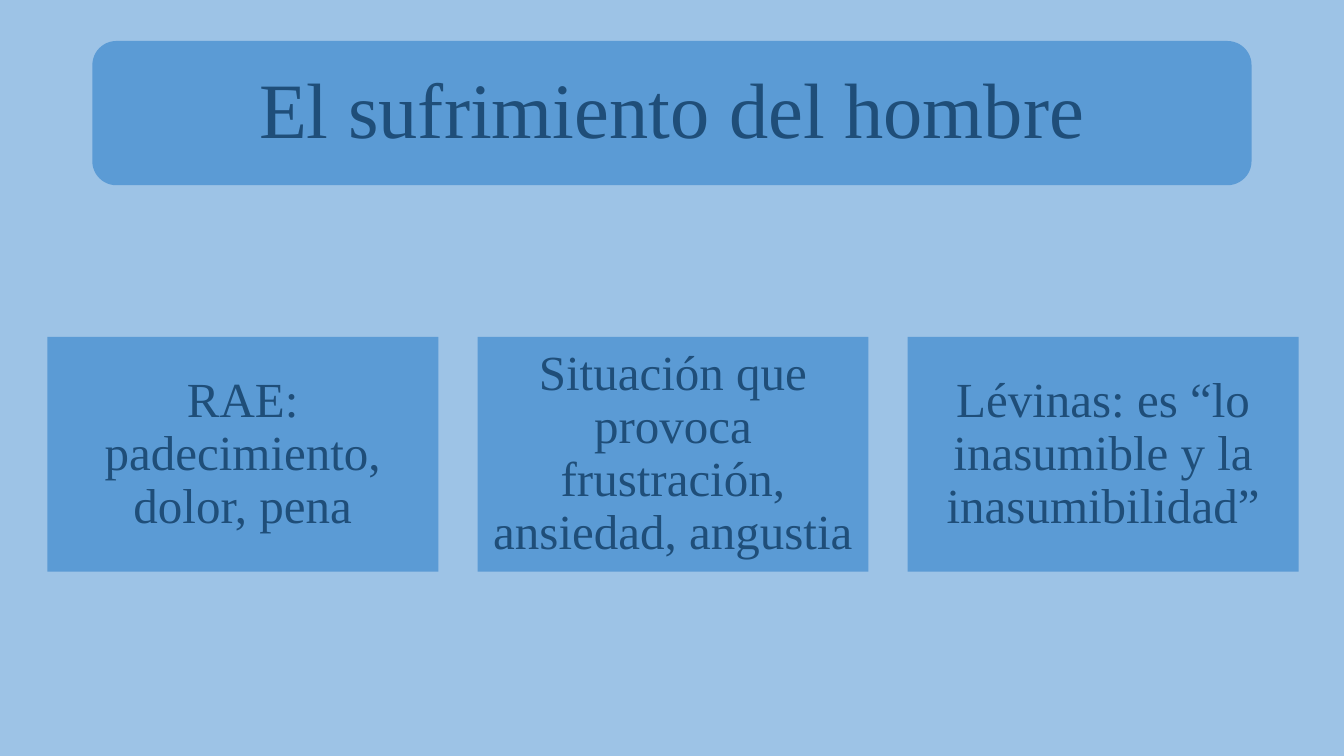
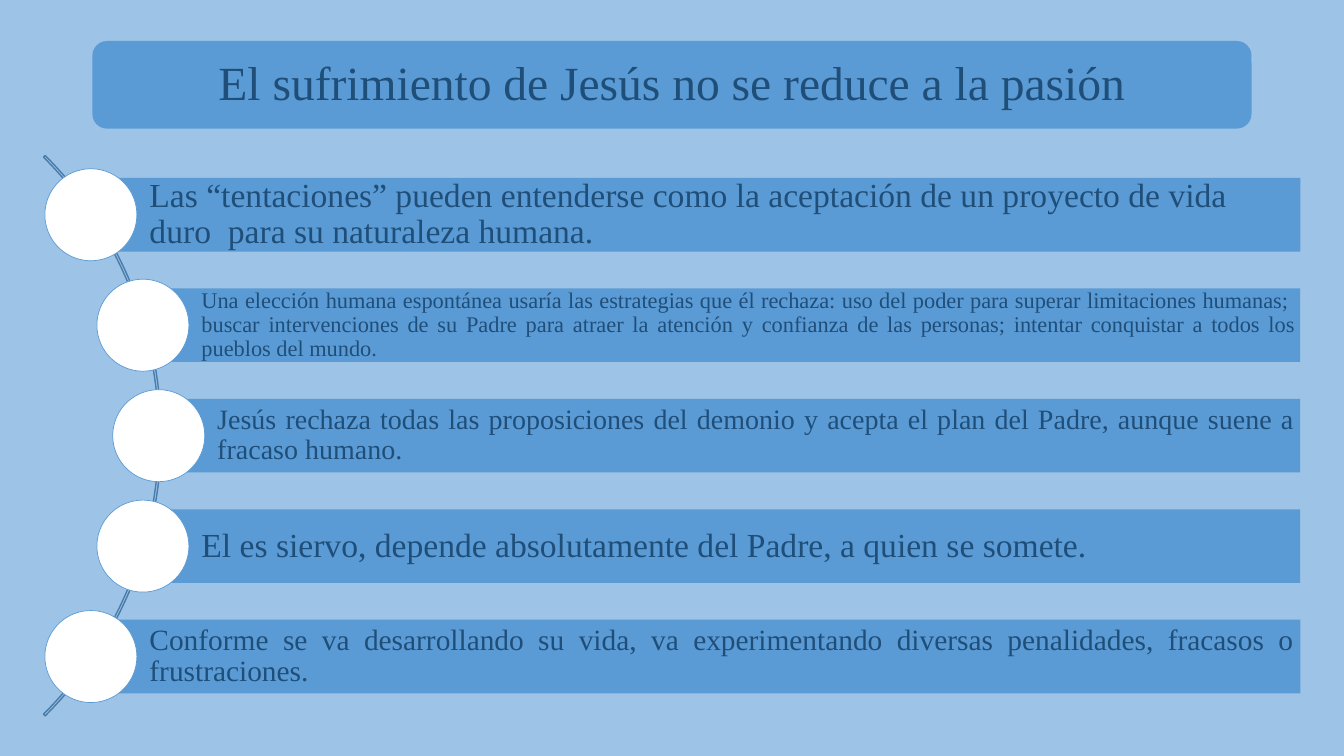
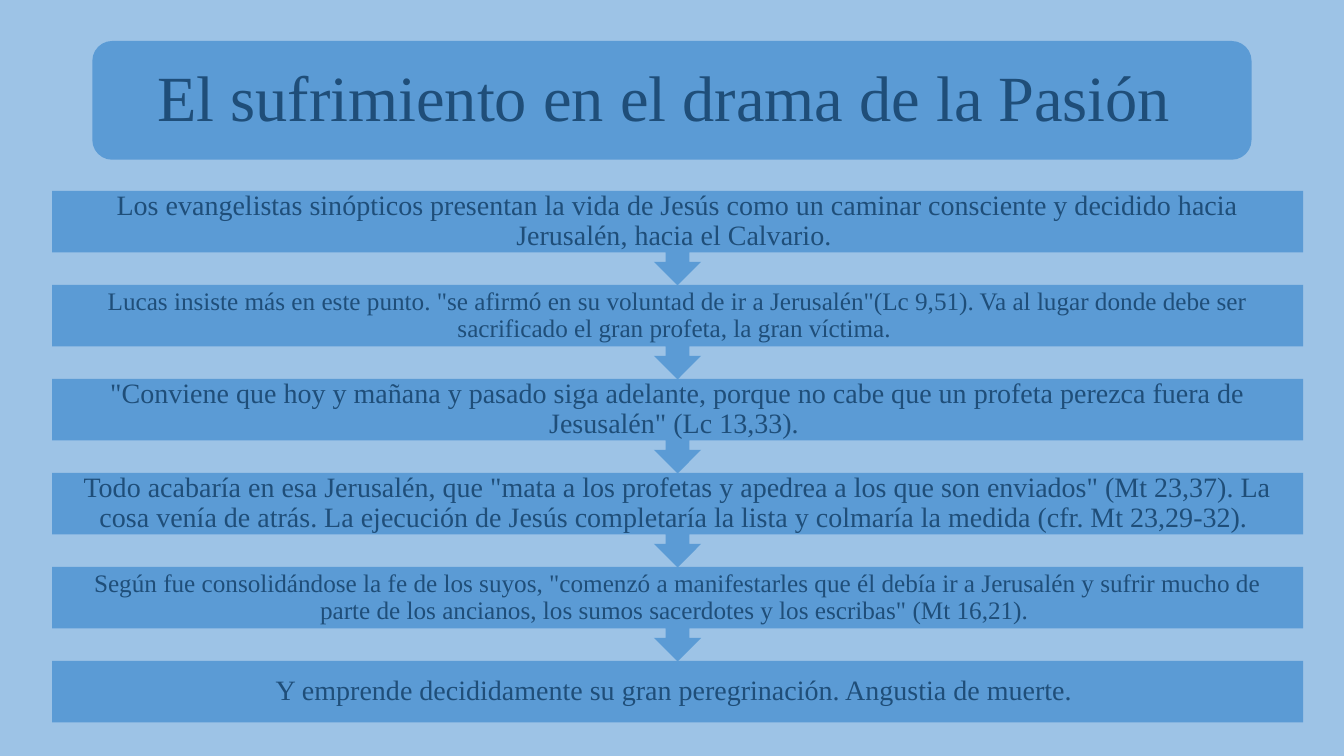
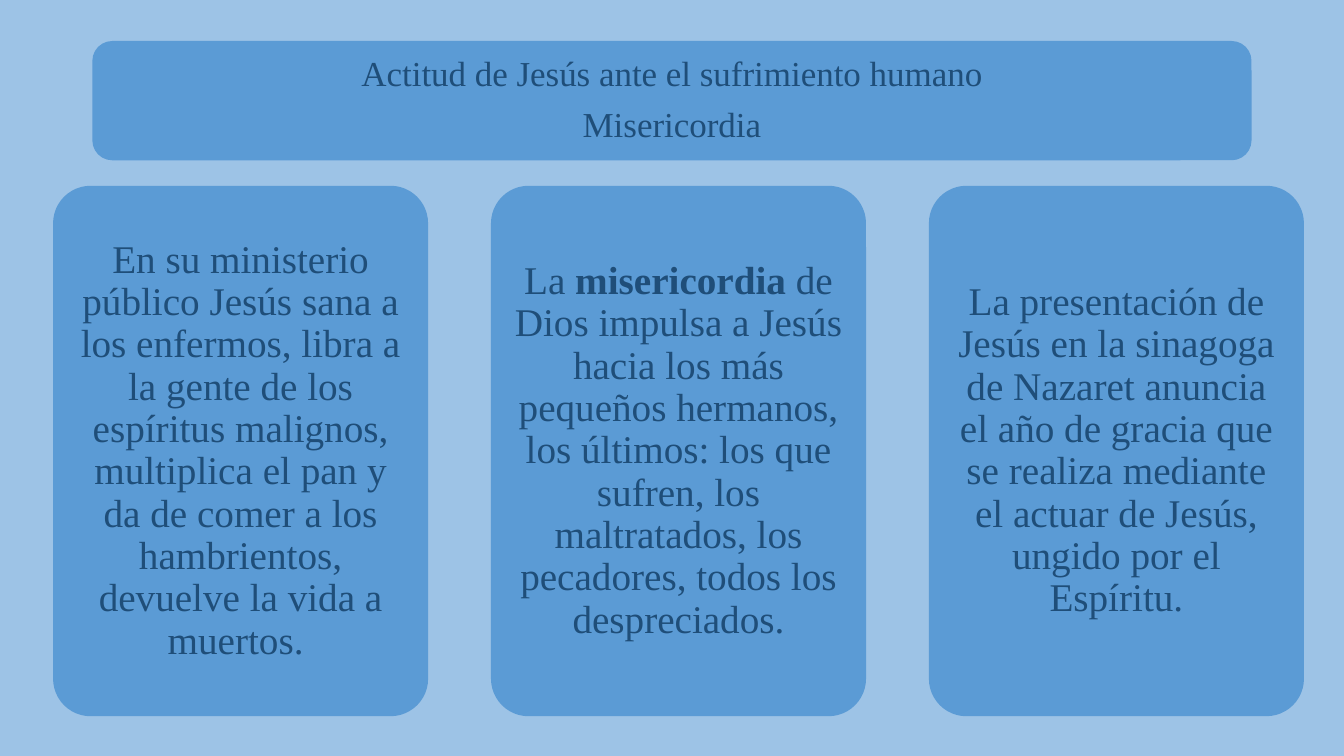
from math import sqrt

from pptx import Presentation
from pptx.dml.color import RGBColor
from pptx.enum.shapes import MSO_SHAPE as Shape
from pptx.enum.text import MSO_ANCHOR as Anchor, MSO_AUTO_SIZE as AutoSize, PP_ALIGN as Align
from pptx.util import Pt

SKY = RGBColor(0x9D, 0xC3, 0xE6)
BLUE = RGBColor(0x5B, 0x9B, 0xD5)
NAVY = RGBColor(0x1F, 0x4E, 0x79)
STEEL = RGBColor(0x49, 0x7C, 0xAB)
WHITE = RGBColor(0xFF, 0xFF, 0xFF)


def assign(target, values):
    """Set every attribute named in values on the target."""
    for name, value in values.items():
        setattr(target, name, value)


class Deck:
    """Holds the shared style and the current slide."""

    font = "Times New Roman"
    title_left, title_top, title_width = 66, 29.3, 828

    def __init__(self):
        """Start a widescreen presentation with the shared background."""
        self.presentation = Presentation()
        assign(self.presentation, {"slide_width": Pt(960), "slide_height": Pt(540)})
        background = self.presentation.slide_master.background.fill
        background.solid()
        background.fore_color.rgb = SKY
        self.slide = None

    def shape(self, kind, left, top, width, height, fill=BLUE, line=None, line_width=1):
        """Add a flat shape, unfilled or unlined where the colour is None."""
        shape = self.slide.shapes.add_shape(kind, Pt(left), Pt(top), Pt(width), Pt(height))
        shape.shadow.inherit = False
        for target, colour in ((shape.fill, fill), (shape.line.fill, line)):
            if colour is None:
                target.background()
            else:
                target.solid()
                target.fore_color.rgb = colour
        if line is not None:
            shape.line.width = Pt(line_width)
        return shape

    def put_text(self, shape, text, size, align=Align.CENTER, left=0, right=0):
        """Fill a shape with lines of text; asterisks enclose bold words."""
        frame = shape.text_frame
        assign(frame, {
            "word_wrap": True, "auto_size": AutoSize.NONE, "vertical_anchor": Anchor.MIDDLE,
            "margin_left": Pt(left), "margin_right": Pt(right),
            "margin_top": 0, "margin_bottom": 0,
        })
        lines = text.split("\n")
        for number, line in enumerate(lines, 1):
            paragraph = frame.paragraphs[0] if number == 1 else frame.add_paragraph()
            gap = 0 if number == len(lines) else size * 0.35
            assign(paragraph, {"alignment": align, "line_spacing": 0.9,
                               "space_before": Pt(0), "space_after": Pt(gap)})
            for index, words in enumerate(line.split("*")):
                run = paragraph.add_run()
                run.text = words
                assign(run.font, {"name": self.font, "size": Pt(size), "bold": index % 2 == 1})
                run.font.color.rgb = NAVY

    def new_slide(self, text, size, height):
        """Add a slide with its title on a rounded band."""
        self.slide = self.presentation.slides.add_slide(self.presentation.slide_layouts[5])
        place = self.title_left, self.title_top, self.title_width, height
        band = self.shape(Shape.ROUNDED_RECTANGLE, *place)
        title = self.slide.shapes.title
        assign(title, dict(zip(("left", "top", "width", "height"), map(Pt, place))))
        self.put_text(title, text, size)
        band.element.addnext(title.element)

    def cards(self, kind, texts, size, left, top, width, height, pitch, inset):
        """Add a row of equally spaced cards."""
        for index, text in enumerate(texts):
            card = self.shape(kind, left + index * pitch, top, width, height)
            if kind == Shape.ROUNDED_RECTANGLE:
                card.adjustments[0] = 0.1
            self.put_text(card, text, size, left=inset, right=inset)

    def arc_list(self, rows):
        """Add bars whose round markers follow an arc."""
        centre_x, centre_y, outer, orbit = -167.8, 311.2, 283, 281.2
        pitch, bar_height, marker, right_edge = 78.9, 52.6, 65.7, 928.8
        arc = self.shape(Shape.BLOCK_ARC, centre_x - outer, centre_y - outer,
                         2 * outer, 2 * outer, None, STEEL)
        for index, value in enumerate((189, 27, 0.003)):
            arc.adjustments[index] = value
        for index, (text, size, align, inset) in enumerate(rows):
            offset = (index - (len(rows) - 1) / 2) * pitch
            x, y = centre_x + sqrt(orbit ** 2 - offset ** 2), centre_y + offset
            bar = self.shape(Shape.RECTANGLE, x, y - bar_height / 2, right_edge - x, bar_height)
            self.put_text(bar, text, size, align, 41.8, inset)
            self.shape(Shape.OVAL, x - marker / 2, y - marker / 2, marker, marker,
                       WHITE, BLUE, 0.5)

    def steps(self, rows):
        """Add full-width steps, each pointing down to the next."""
        left, top, width, pitch, callout, box = 37.2, 136.3, 893.6, 67.15, 67.6, 44
        for index, (text, size) in enumerate(rows):
            last = index == len(rows) - 1
            step = self.shape(Shape.RECTANGLE if last else Shape.DOWN_ARROW_CALLOUT,
                              left, top + index * pitch, width, box if last else callout)
            self.put_text(step, text, size, left=11, right=11)


def main():
    """Build the four slides and save them."""
    deck = Deck()

    deck.new_slide("El sufrimiento del hombre", 56, 103)
    deck.cards(Shape.RECTANGLE, [
        "RAE: padecimiento, dolor, pena",
        "Situación que provoca frustración, ansiedad, angustia",
        "Lévinas: es “lo inasumible y la inasumibilidad”",
    ], 35, 33.8, 240.7, 279.3, 167.6, 307.3, 9)

    deck.new_slide("El sufrimiento de Jesús no se reduce a la pasión", 34, 62.6)
    deck.arc_list([
        ("Las “tentaciones” pueden entenderse como la aceptación de un proyecto de vida "
         "duro  para su naturaleza humana.", 24, Align.LEFT, 5),
        ("Una elección humana espontánea usaría las estrategias que él rechaza: uso del poder "
         "para superar limitaciones humanas;  buscar intervenciones de su Padre para atraer la "
         "atención y confianza de las personas; intentar conquistar a todos los pueblos del "
         "mundo.", 16, Align.JUSTIFY, 3.2),
        ("Jesús rechaza todas las proposiciones del demonio y acepta el plan del Padre, aunque "
         "suene a fracaso humano. ", 20, Align.JUSTIFY, 4),
        ("El es siervo, depende absolutamente del Padre, a quien se somete. ",
         24, Align.JUSTIFY, 5),
        ("Conforme se va desarrollando su vida, va experimentando diversas penalidades, "
         "fracasos o frustraciones. ", 21, Align.JUSTIFY, 4.2),
    ])

    deck.new_slide("El sufrimiento en el drama de la Pasión ", 46, 84.8)
    deck.steps([
        ("Los evangelistas sinópticos presentan la vida de Jesús como un caminar consciente y "
         "decidido hacia Jerusalén, hacia el Calvario. ", 20),
        ('Lucas insiste más en este punto. "se afirmó en su voluntad de ir a Jerusalén"(Lc '
         "9,51). Va al lugar donde debe ser sacrificado el gran profeta, la gran víctima. ", 18),
        ('"Conviene que hoy y mañana y pasado siga adelante, porque no cabe que un profeta '
         'perezca fuera de Jesusalén" (Lc 13,33). ', 20),
        ('Todo acabaría en esa Jerusalén, que "mata a los profetas y apedrea a los que son '
         'enviados" (Mt 23,37). La cosa venía de atrás. La ejecución de Jesús completaría la '
         "lista y colmaría la medida (cfr. Mt 23,29-32). ", 20),
        ('Según fue consolidándose la fe de los suyos, "comenzó a manifestarles que él debía '
         "ir a Jerusalén y sufrir mucho de parte de los ancianos, los sumos sacerdotes y los "
         'escribas" (Mt 16,21). ', 18),
        ("Y emprende decididamente su gran peregrinación. Angustia de muerte. ", 20),
    ])

    deck.new_slide("Actitud de Jesús ante el sufrimiento humano\nMisericordia", 25, 85.2)
    deck.cards(Shape.ROUNDED_RECTANGLE, [
        "En su ministerio público Jesús sana a los enfermos, libra a la gente de los espíritus "
        "malignos, multiplica el pan y da de comer a los hambrientos, devuelve la vida a "
        "muertos. ",
        "La *misericordia* de Dios impulsa a Jesús hacia los más pequeños hermanos, los "
        "últimos: los que sufren, los maltratados, los pecadores, todos los despreciados.",
        "La presentación de Jesús en la sinagoga de Nazaret anuncia el año de gracia que se "
        "realiza mediante el actuar de Jesús, ungido por el Espíritu.",
    ], 28, 37.9, 132.7, 267.9, 378.9, 312.8, 8.4)

    deck.presentation.save("out.pptx")


if __name__ == "__main__":
    main()
